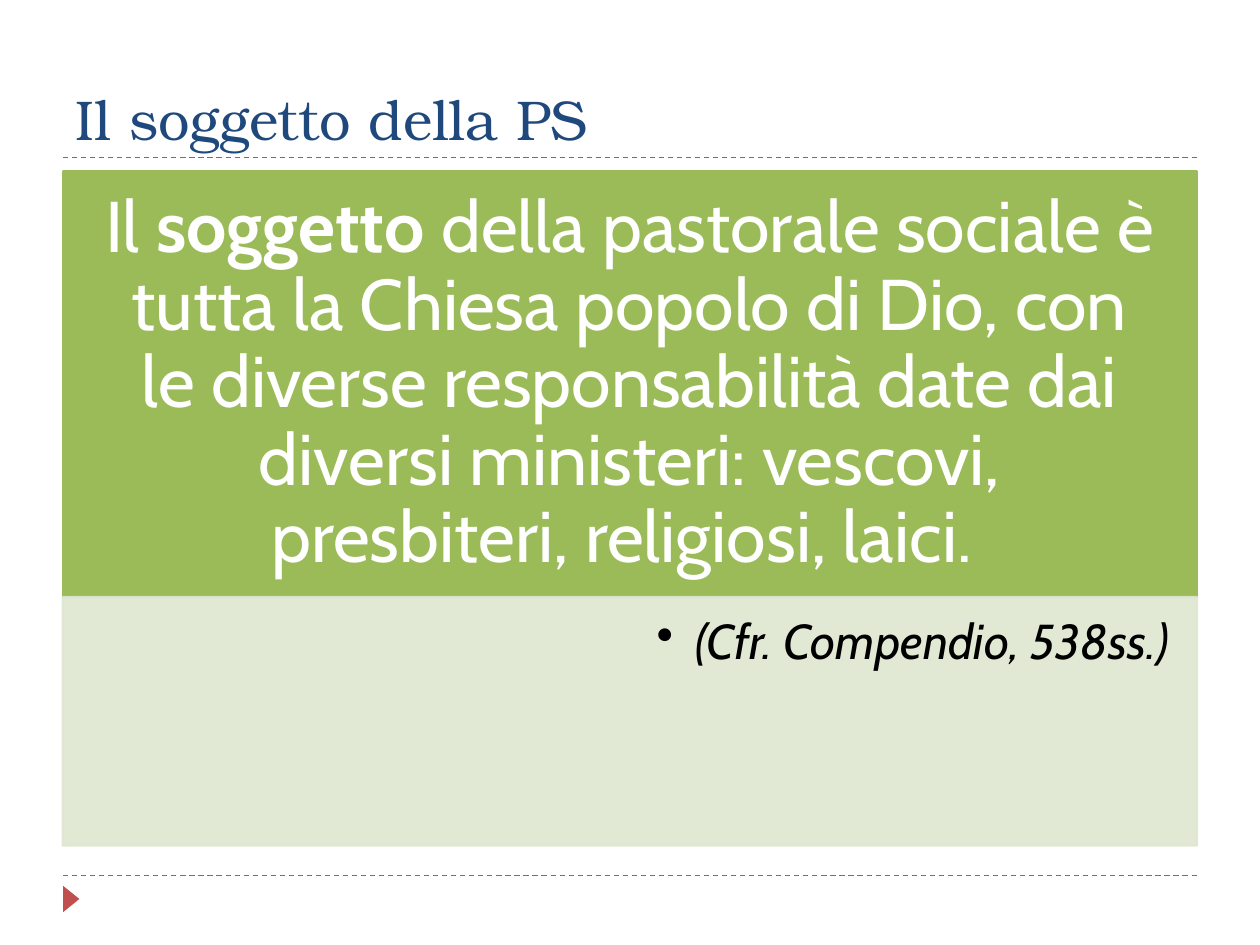
from lxml import etree
from pptx import Presentation
from pptx.dml.color import RGBColor
from pptx.enum.dml import MSO_LINE
from pptx.enum.shapes import MSO_CONNECTOR, MSO_SHAPE
from pptx.enum.text import MSO_ANCHOR, PP_ALIGN
from pptx.oxml.ns import qn
from pptx.util import Inches, Pt

DASH = MSO_LINE.DASH
STRAIGHT = MSO_CONNECTOR.STRAIGHT
RECT, WEDGE = MSO_SHAPE.RECTANGLE, MSO_SHAPE.ISOSCELES_TRIANGLE
TOP, MIDDLE, BOTTOM = MSO_ANCHOR.TOP, MSO_ANCHOR.MIDDLE, MSO_ANCHOR.BOTTOM
LEFT, CENTER, RIGHT = PP_ALIGN.LEFT, PP_ALIGN.CENTER, PP_ALIGN.RIGHT
RED, GREEN, PALE, NAVY = "C0504D", "9BBB59", "DEE7D1", "1F497D"


def color(code):
    return RGBColor.from_string(code)


def write(shape, parts, font, size, code, align, anchor, insets):
    """Fill the shape with one paragraph of (text, bold, italic) parts."""
    frame = shape.text_frame
    frame.word_wrap = True
    frame.vertical_anchor = anchor
    (frame.margin_left, frame.margin_top,
     frame.margin_right, frame.margin_bottom) = map(Inches, insets)
    para = frame.paragraphs[0]
    para.alignment = align
    for text, bold, italic in parts:
        run = para.add_run()
        run.text = text
        run.font.name, run.font.size = font, Pt(size)
        run.font.bold, run.font.italic = bold, italic
        run.font.color.rgb = color(code)
    return para


deck = Presentation()
deck.slide_width, deck.slide_height = Inches(10), Inches(7.5)
slide = deck.slides.add_slide(deck.slide_layouts[6])
shapes = slide.shapes
edge = deck.slide_width * 0.05
wide = deck.slide_width - 2 * edge

# Dashed rules and the footer marker
for y in (6.95, 1.25):
    rule = shapes.add_connector(
        STRAIGHT, int(edge), Inches(y), int(edge + wide), Inches(y))
    rule.line.color.rgb = color(RED)
    rule.line.width = Pt(0.75)
    rule.line.dash_style = DASH
    etree.SubElement(rule.element.spPr, qn("a:effectLst"))

mark = shapes.add_shape(
    WEDGE, Inches(0.46), Inches(7.07), Inches(0.21), Inches(0.13))
mark.rotation = 90
mark.shadow.inherit = False
mark.fill.solid()
mark.fill.fore_color.rgb = color(RED)
mark.line.fill.background()

# Title
title = shapes.add_textbox(int(edge), Inches(0.17), int(wide), Inches(1.08))
write(title, [("Il soggetto della PS", False, False)],
      "TeX Gyre Bonum", 32, NAVY, LEFT, BOTTOM, (0.1, 0.05, 0.1, 0.05))

# Statement band above its source band
claim = [
    ("Il ", False, False),
    ("soggetto", True, False),
    (" della pastorale sociale è tutta la Chiesa popolo di Dio, con le "
     "diverse responsabilità date dai diversi ministeri: vescovi, "
     "presbiteri, religiosi, laici. ", False, False),
]
source = [("(Cfr. Compendio, 538ss.)", False, True)]
bands = [
    (3.38, GREEN, claim, 41, "FFFFFF", CENTER, MIDDLE, (0.32, 0.18, 0.32, 0.18)),
    (1.97, PALE, source, 28, "000000", RIGHT, TOP, (0.16, 0.16, 0.22, 0.24)),
]
top = 1.36
for tall, tint, parts, size, ink, align, anchor, insets in bands:
    band = shapes.add_shape(
        RECT, int(edge), Inches(top), int(wide), Inches(tall))
    band.shadow.inherit = False
    band.fill.solid()
    band.fill.fore_color.rgb = color(tint)
    band.line.color.rgb = color(tint)
    band.line.width = Pt(1.5)
    para = write(band, parts, "Cabin", size, ink, align, anchor, insets)
    para.line_spacing = 0.9
    top += tall

# The last band is slightly see-through and its text is bulleted
for node in band.element.spPr.iter(qn("a:srgbClr")):
    etree.SubElement(node, qn("a:alpha"), val="90000")
props = para._p.get_or_add_pPr()
props.set("marL", str(Inches(0.31)))
props.set("indent", str(-Inches(0.31)))
etree.SubElement(props, qn("a:buChar"), char="•")

deck.save("out.pptx")
